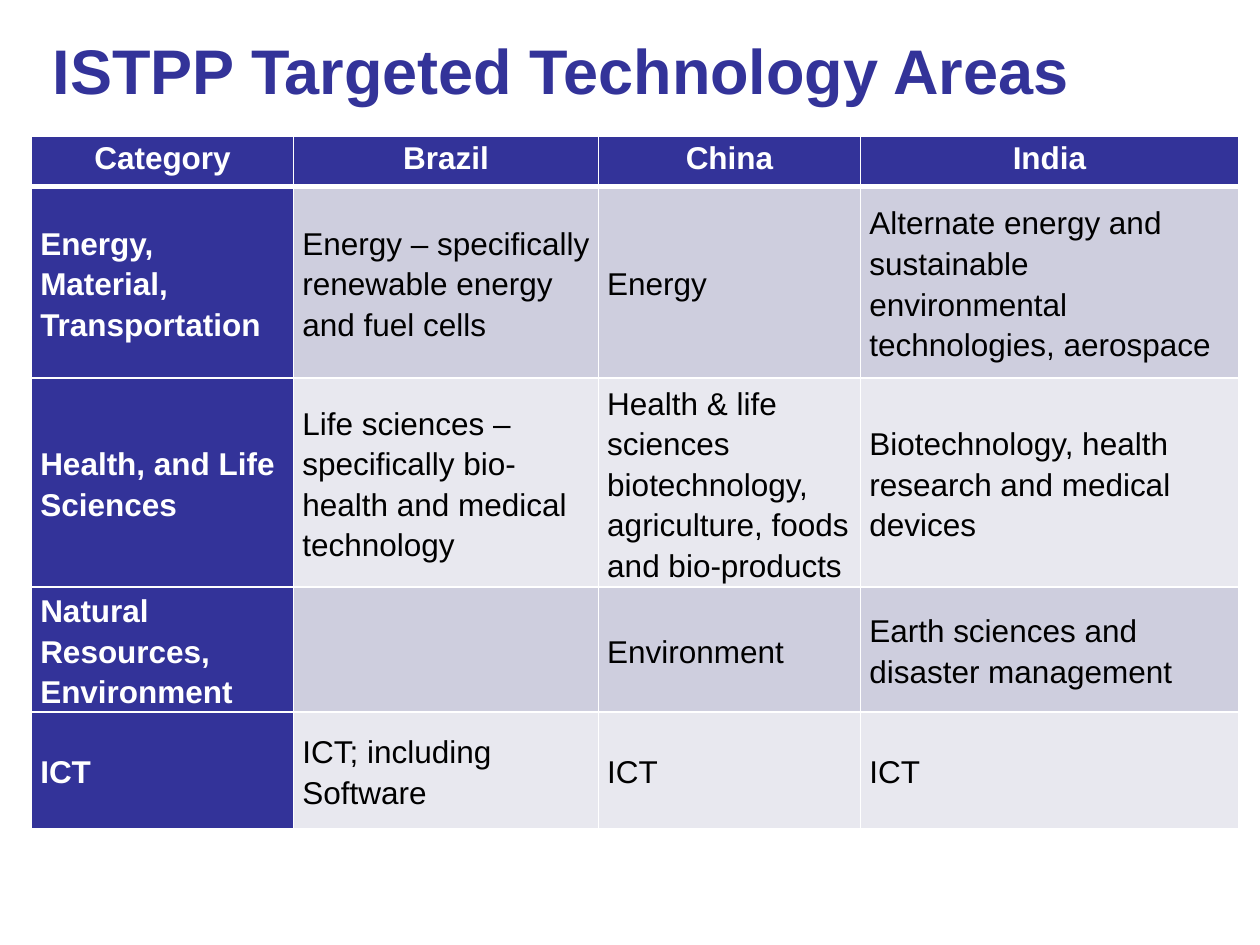
from dataclasses import dataclass

from lxml.etree import SubElement
from pptx import Presentation
from pptx.dml.color import RGBColor
from pptx.enum.text import MSO_ANCHOR as Anchor, PP_ALIGN as Align
from pptx.oxml.ns import qn
from pptx.util import Inches, Pt

COLORS = {
    "navy": "333399",
    "white": "FFFFFF",
    "black": "000000",
    "lavender": "CECEDE",
    "mist": "E8E8EF",
}
COLUMN_WIDTHS = (2.08, 2.42, 2.08, 3)
HEADINGS = ("Category", "Brazil", "China", "India")
HEADING_HEIGHT = 0.4


@dataclass(frozen=True)
class Area:
    height: float
    category: str
    brazil: str
    china: str
    india: str


AREAS = (
    Area(1.52, "Energy, Material, Transportation",
         "Energy – specifically renewable energy and fuel cells",
         "Energy",
         "Alternate energy and sustainable environmental technologies, aerospace"),
    Area(1.66, "Health, and Life Sciences",
         "Life sciences – specifically bio-health and medical technology",
         "Health & life sciences biotechnology, agriculture, foods and bio-products",
         "Biotechnology, health research and medical devices"),
    Area(0.99, "Natural Resources, Environment",
         "",
         "Environment",
         "Earth sciences and disaster management"),
    Area(0.93, "ICT", "ICT; including Software", "ICT", "ICT"),
)


def write(frame, text: str, *, size: float, color: str, bold: bool = False,
          align=Align.LEFT, spacing: float = 1.0) -> None:
    paragraph = frame.paragraphs[0]
    paragraph.alignment = align
    paragraph.line_spacing = spacing
    if not text:
        paragraph.font.size = Pt(size)
        return
    run = paragraph.add_run()
    run.text = text
    run.font.name = "Arial"
    run.font.size = Pt(size)
    run.font.bold = bold
    run.font.color.rgb = RGBColor.from_string(COLORS[color])


def add_borders(cell, bottom: float) -> None:
    properties = cell._tc.get_or_add_tcPr()
    for side, width in (("L", 1), ("R", 1), ("T", 1), ("B", bottom)):
        line = SubElement(properties, qn(f"a:ln{side}"), w=str(Pt(width)))
        fill = SubElement(line, qn("a:solidFill"))
        SubElement(fill, qn("a:srgbClr"), val=COLORS["white"])


def fill_cell(cell, text: str, *, fill: str, color: str, bold: bool,
              align=Align.LEFT, anchor=Anchor.MIDDLE, bottom: float = 1) -> None:
    cell.margin_left = cell.margin_right = Inches(0.07)
    cell.margin_top = cell.margin_bottom = 0
    cell.vertical_anchor = anchor
    add_borders(cell, bottom)
    cell.fill.solid()
    cell.fill.fore_color.rgb = RGBColor.from_string(COLORS[fill])
    write(cell.text_frame, text, size=18, color=color, bold=bold,
          align=align, spacing=1.15)


def add_title(slide, text: str) -> None:
    title = slide.shapes.title
    title.left, title.top = Inches(0.42), Inches(0.25)
    title.width, title.height = Inches(9.33), Inches(0.6)
    frame = title.text_frame
    frame.margin_left = frame.margin_right = 0
    frame.margin_top = frame.margin_bottom = 0
    frame.vertical_anchor = Anchor.MIDDLE
    write(frame, text, size=36, color="navy", bold=True)


def add_area_table(slide) -> None:
    heights = (HEADING_HEIGHT, *(area.height for area in AREAS))
    table = slide.shapes.add_table(
        len(heights), len(HEADINGS), Inches(0.25), Inches(1.08),
        Inches(sum(COLUMN_WIDTHS)), Inches(sum(heights))).table
    for column, width in zip(table.columns, COLUMN_WIDTHS):
        column.width = Inches(width)
    for row, height in zip(table.rows, heights):
        row.height = Inches(height)
    for column, heading in enumerate(HEADINGS):
        fill_cell(table.cell(0, column), heading, fill="navy", color="white",
                  bold=True, align=Align.CENTER, anchor=Anchor.TOP, bottom=3)
    for row, area in enumerate(AREAS, start=1):
        band = "lavender" if row % 2 else "mist"
        fill_cell(table.cell(row, 0), area.category, fill="navy",
                  color="white", bold=True)
        for column, topic in enumerate((area.brazil, area.china, area.india), start=1):
            fill_cell(table.cell(row, column), topic, fill=band,
                      color="black", bold=False)


def main() -> None:
    deck = Presentation()
    deck.slide_width, deck.slide_height = Inches(10), Inches(7.5)
    slide = deck.slides.add_slide(deck.slide_layouts.get_by_name("Title Only"))
    add_title(slide, "ISTPP Targeted Technology Areas")
    add_area_table(slide)
    deck.save("out.pptx")


if __name__ == "__main__":
    main()
